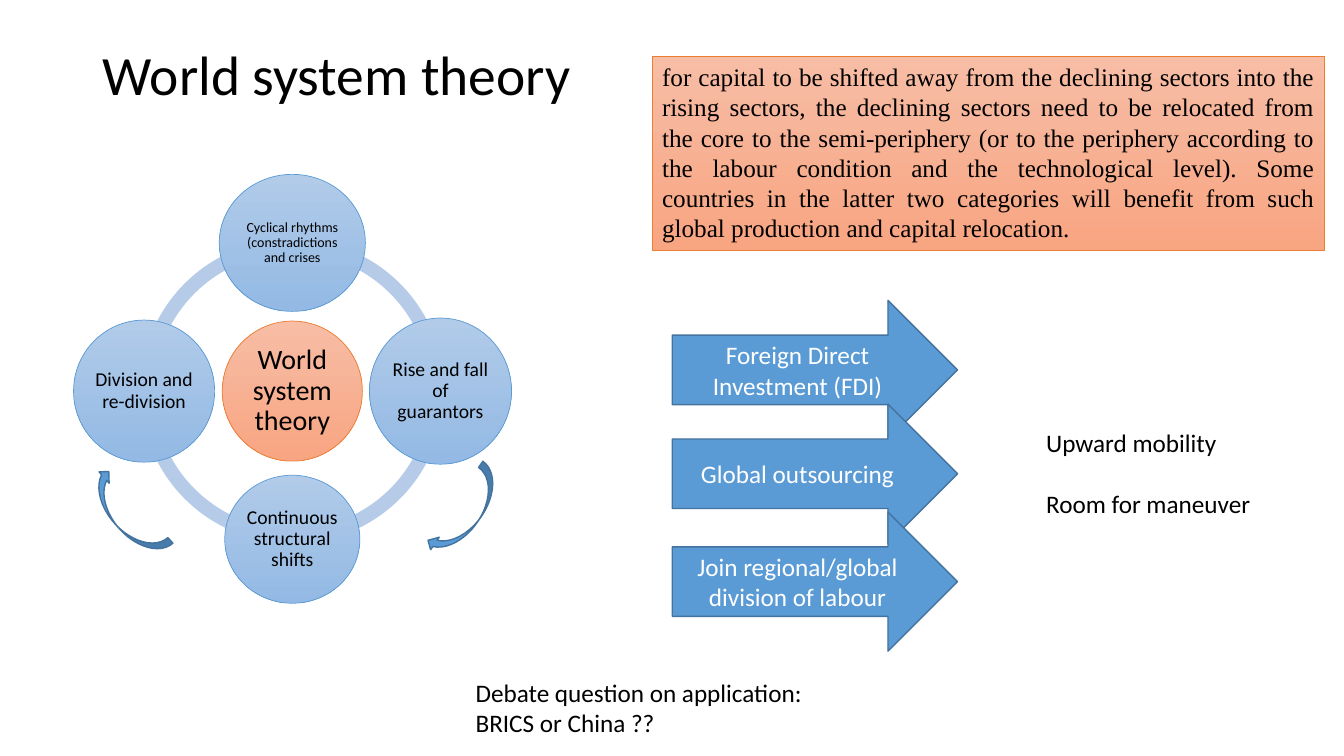
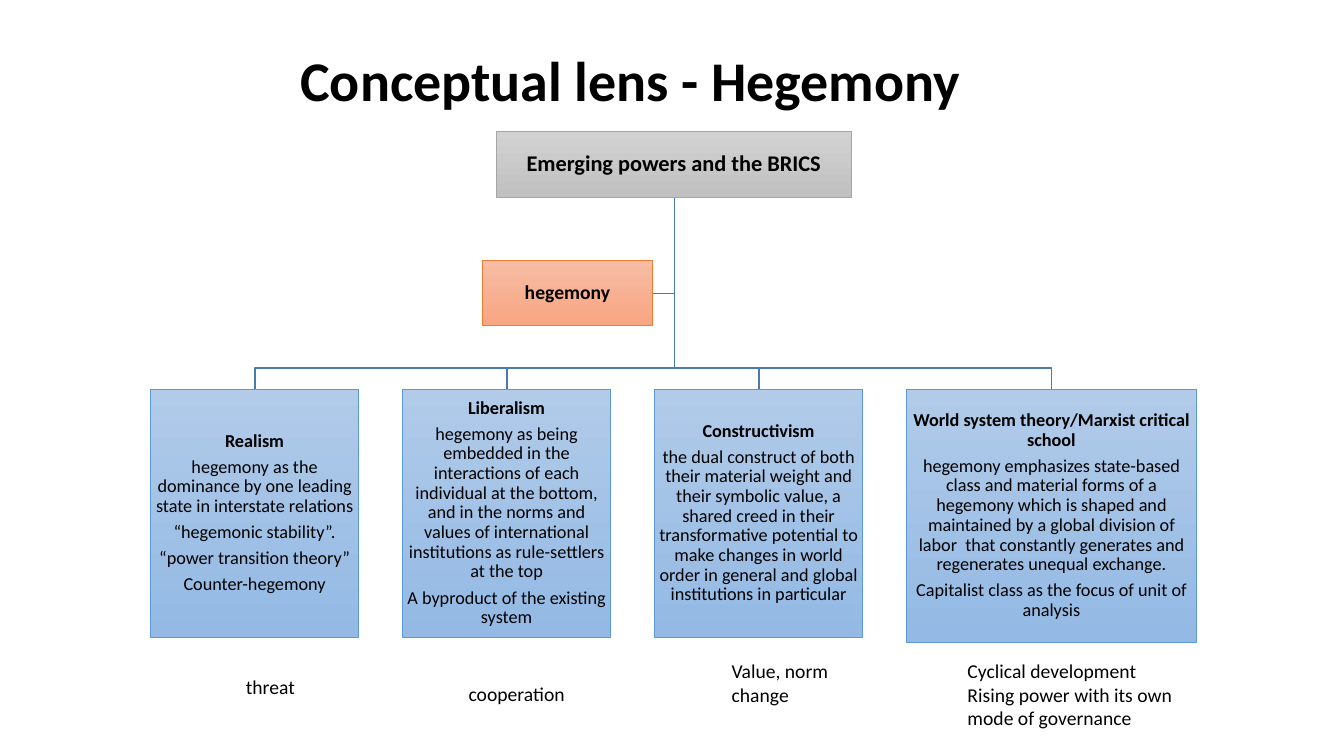
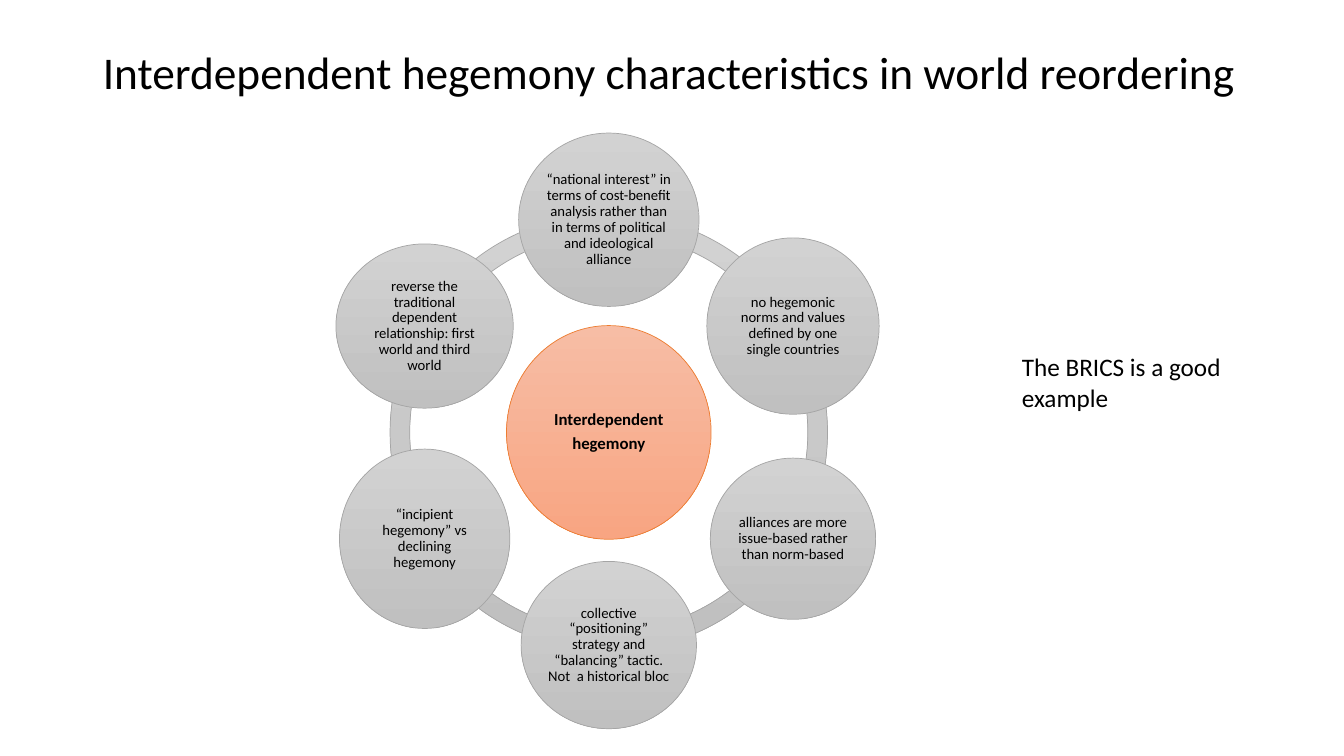
from math import cos, radians, sin

from pptx import Presentation
from pptx.dml.color import RGBColor
from pptx.enum.shapes import MSO_SHAPE
from pptx.enum.text import MSO_ANCHOR, MSO_AUTO_SIZE, PP_ALIGN
from pptx.util import Pt

RECT, OVAL = MSO_SHAPE.RECTANGLE, MSO_SHAPE.OVAL
ARC, ARROW, CURVE = MSO_SHAPE.BLOCK_ARC, MSO_SHAPE.RIGHT_ARROW, MSO_SHAPE.CURVED_LEFT_ARROW
LEFT, CENTER, JUSTIFY = PP_ALIGN.LEFT, PP_ALIGN.CENTER, PP_ALIGN.JUSTIFY
TOP, MIDDLE = MSO_ANCHOR.TOP, MSO_ANCHOR.MIDDLE
NO_FIT = MSO_AUTO_SIZE.NONE

SCALE = 9144  # EMU in one px, 100 px to the inch
FONT, SERIF = "Calibri", "Times New Roman"
BLACK, WHITE = "000000", "FFFFFF"

# A look is fill colours (one, or the two ends of a gradient), line colour, line width
BLUE = (("B1CBE9", "93B9E4"), "5B9BD5", 0.5)
ORANGE = (("F7BDA5", "F8A582"), "ED7D31", 0.5)
GREY = (("D2D2D2", "C0C0C0"), "A5A5A5", 0.5)
SOLID = (("5B9BD5",), "43739E", 1)
PALE = (("B5CBE7",), None, 0)
WIRE = "497CAB"

# Slide 1
CYCLE = [  # text, width, height, size
    ("Cyclical rhythms (constradictions and crises", 145, 136, 10),
    ("Rise and fall of guarantors", 141, 145, 14),
    ("Continuous structural shifts", 134, 127, 14),
    ("Division and re-division", 140, 141, 14),
]
CYCLE_CORE = ("World system theory", 139, 139, 20)
SHIFT = (
    "for capital to be shifted away from the declining sectors into the rising sectors, "
    "the declining sectors need to be relocated from the core to the semi-periphery "
    "(or to the periphery according to the labour condition and the technological level). "
    "Some countries in the latter two categories will benefit from such global production "
    "and capital relocation."
)
PATHS = [  # text, top
    ("Foreign Direct Investment (FDI)", 298),
    ("Global outsourcing", 401),
    ("Join regional/global division of labour", 508),
]
TURNS = [((447, 457, 30, 103), 34.8), ((111, 459, 30, 103), 138.2)]
GAINS = "Upward mobility\nRoom for maneuver"
DEBATE = "Debate question on application:\nBRICS or China ??"

# Slide 2
SCHOOLS = [  # width, height, heading, body
    (207, 246, "Realism",
     "hegemony as the dominance by one leading state in interstate relations\n"
     "“hegemonic stability”.\n“power transition theory”\nCounter-hegemony"),
    (207, 246, "Liberalism",
     "hegemony as being embedded in the interactions of each individual at the bottom, "
     "and in the norms and values of international institutions as rule-settlers at the top\n"
     "A byproduct of the existing system"),
    (207, 246, "Constructivism",
     "the dual construct of both their material weight and their symbolic value, a shared "
     "creed in their transformative potential to make changes in world order in general and "
     "global institutions in particular"),
    (288, 251, "World system theory/Marxist critical school",
     "hegemony emphasizes state-based class and material forms of a hegemony which is shaped "
     "and maintained by a global division of labor  that constantly generates and regenerates "
     "unequal exchange.\nCapitalist class as the focus of unit of analysis"),
]
VIEWS = [
    ("threat", (234, 665, 109, 34)),
    ("cooperation", (455, 672, 149, 34)),
    ("Value, norm change", (716, 649, 172, 57)),
    ("Cyclical development\nRising power with its own mode of governance", (950, 649, 237, 81)),
]

# Slide 3
TRAITS = [
    ("“national interest” in terms of cost-benefit analysis rather than in terms of "
     "political and ideological alliance", 179, 172, 10.5),
    ("no hegemonic norms and values defined by one single countries", 171, 175, 10.5),
    ("alliances are more issue-based rather than norm-based", 164, 160, 10.5),
    ("collective “positioning” strategy and “balancing” tactic. Not  a historical bloc",
     174, 166, 10.5),
    ("“incipient hegemony” vs declining hegemony", 169, 178, 10.5),
    ("reverse the traditional dependent relationship: first world and third world",
     176, 163, 10.5),
]
TRAIT_CORE = ("Interdependent\nhegemony", 203, 212, 12)


def px(n):
    return round(n * SCALE)


def rgb(code):
    return RGBColor.from_string(code)


def write(shape, text, size, color=BLACK, font=FONT, bold=False, align=LEFT,
          anchor=TOP, inset=None, tight=False):
    """Set and format text; tight means the close spacing used in diagrams."""
    frame = shape.text_frame
    frame.text = text
    frame.word_wrap = True
    frame.auto_size = NO_FIT
    frame.vertical_anchor = anchor
    if inset is not None:
        frame.margin_left = frame.margin_right = px(inset)
        frame.margin_top = frame.margin_bottom = px(inset)
    for para in frame.paragraphs:
        para.alignment = align
        if tight:
            para.line_spacing = 0.9
            para.space_after = Pt(size * 0.35)
        for run in para.runs:
            run.font.size = Pt(size)
            run.font.name = font
            run.font.bold = bold
            run.font.color.rgb = rgb(color)
    return frame


def draw(slide, kind, box, look):
    shape = slide.shapes.add_shape(kind, *map(px, box))
    shape.shadow.inherit = False
    fills, edge, width = look
    if len(fills) == 1:
        shape.fill.solid()
        shape.fill.fore_color.rgb = rgb(fills[0])
    else:
        shape.fill.gradient()
        shape.fill.gradient_angle = 270
        for stop, code in zip(shape.fill.gradient_stops, fills):
            stop.color.rgb = rgb(code)
    if edge:
        shape.line.color.rgb = rgb(edge)
        shape.line.width = Pt(width)
    else:
        shape.line.fill.background()
    return shape


def node(slide, kind, box, look, text, size, bold=False):
    shape = draw(slide, kind, box, look)
    write(shape, text, size, bold=bold, align=CENTER, anchor=MIDDLE, inset=1, tight=True)
    return shape


def label(slide, text, box, size=18):
    return write(slide.shapes.add_textbox(*map(px, box)), text, size)


def branch(slide, first, *rest):
    """An open line with corners."""
    pen = slide.shapes.build_freeform(*first, scale=SCALE)
    pen.add_line_segments(rest, close=False)
    line = pen.convert_to_shape()
    line.shadow.inherit = False
    line.fill.background()
    line.line.color.rgb = rgb(WIRE)
    line.line.width = Pt(1)


def wheel(slide, hub, ring, reach, thick, nodes, core, look, band, bold=False):
    """Nodes spaced evenly round a core, clockwise from the top, on a ring of arcs."""
    x, y = hub
    step = 360 / len(nodes)
    turns = [(270 + i * step) % 360 for i in range(len(nodes))]
    for turn in turns:
        arc = draw(slide, ARC, (x - ring / 2, y - ring / 2, ring, ring), band)
        arc.adjustments[0] = turn * 0.6
        arc.adjustments[1] = (turn + step) % 360 * 0.6
        arc.adjustments[2] = thick
    text, w, h, size = core
    node(slide, OVAL, (x - w / 2, y - h / 2, w, h), ORANGE, text, size, bold)
    for turn, (text, w, h, size) in zip(turns, nodes):
        left = x + reach * cos(radians(turn)) - w / 2
        top = y + reach * sin(radians(turn)) - h / 2
        node(slide, OVAL, (left, top, w, h), look, text, size)


def start(deck, title, box, size, bold=False):
    slide = deck.slides.add_slide(deck.slide_layouts[5])
    head = slide.shapes.title
    head.left, head.top, head.width, head.height = map(px, box)
    frame = write(head, title, size, bold=bold, anchor=MIDDLE)
    frame.paragraphs[0].line_spacing = 0.9
    return slide


def theory(deck):
    slide = start(deck, "World system theory", (92, 40, 1150, 73), 39.6)
    wheel(slide, (290, 388), 302, 147, 0.046, CYCLE, CYCLE_CORE, BLUE, PALE)
    quote = draw(slide, RECT, (647, 56, 667, 192), ORANGE)
    write(quote, SHIFT, 18, font=SERIF, align=JUSTIFY)
    for text, top in PATHS:
        arrow = draw(slide, ARROW, (667, top, 283, 138), SOLID)
        write(arrow, text, 18, WHITE, align=CENTER, anchor=MIDDLE)
    gains = label(slide, GAINS, (1028, 419, 262, 101))
    gains.paragraphs[1].space_before = Pt(22)
    for box, angle in TURNS:
        draw(slide, CURVE, box, SOLID).rotation = angle
    label(slide, DEBATE, (462, 667, 394, 71))


def lens(deck):
    slide = start(deck, "Conceptual lens - Hegemony", (288, 52, 900, 61), 40, True)
    stem, foot, bus, top, gap = 669, 196, 365, 386, 43
    branch(slide, (stem, foot), (stem, 291), (647, 291))
    left = 149
    for w, h, name, body in SCHOOLS:
        mid = left + (w + 1) // 2
        branch(slide, (stem, foot), (stem, bus), (mid, bus), (mid, top))
        box = node(slide, RECT, (left, top, w, h), BLUE, name + "\n" + body, 13)
        box.text_frame.paragraphs[0].runs[0].font.bold = True
        left += w + gap
    node(slide, RECT, (492, 130, 353, 66), GREY, "Emerging powers and the BRICS", 16, True)
    node(slide, RECT, (479, 258, 168, 65), ORANGE, "hegemony", 14, True)
    for text, box in VIEWS:
        label(slide, text, box, 14)


def traits(deck):
    slide = start(deck, "Interdependent hegemony characteristics in world reordering",
                  (92, 47, 1216, 54), 32.4)
    wheel(slide, (604, 429), 434, 211, 0.045, TRAITS, TRAIT_CORE, GREY, GREY, True)
    label(slide, "The BRICS is a good example", (1004, 344, 276, 71))


def main():
    deck = Presentation()
    deck.slide_width, deck.slide_height = px(750 * 16 / 9), px(750)
    theory(deck)
    lens(deck)
    traits(deck)
    deck.save("out.pptx")


if __name__ == "__main__":
    main()
